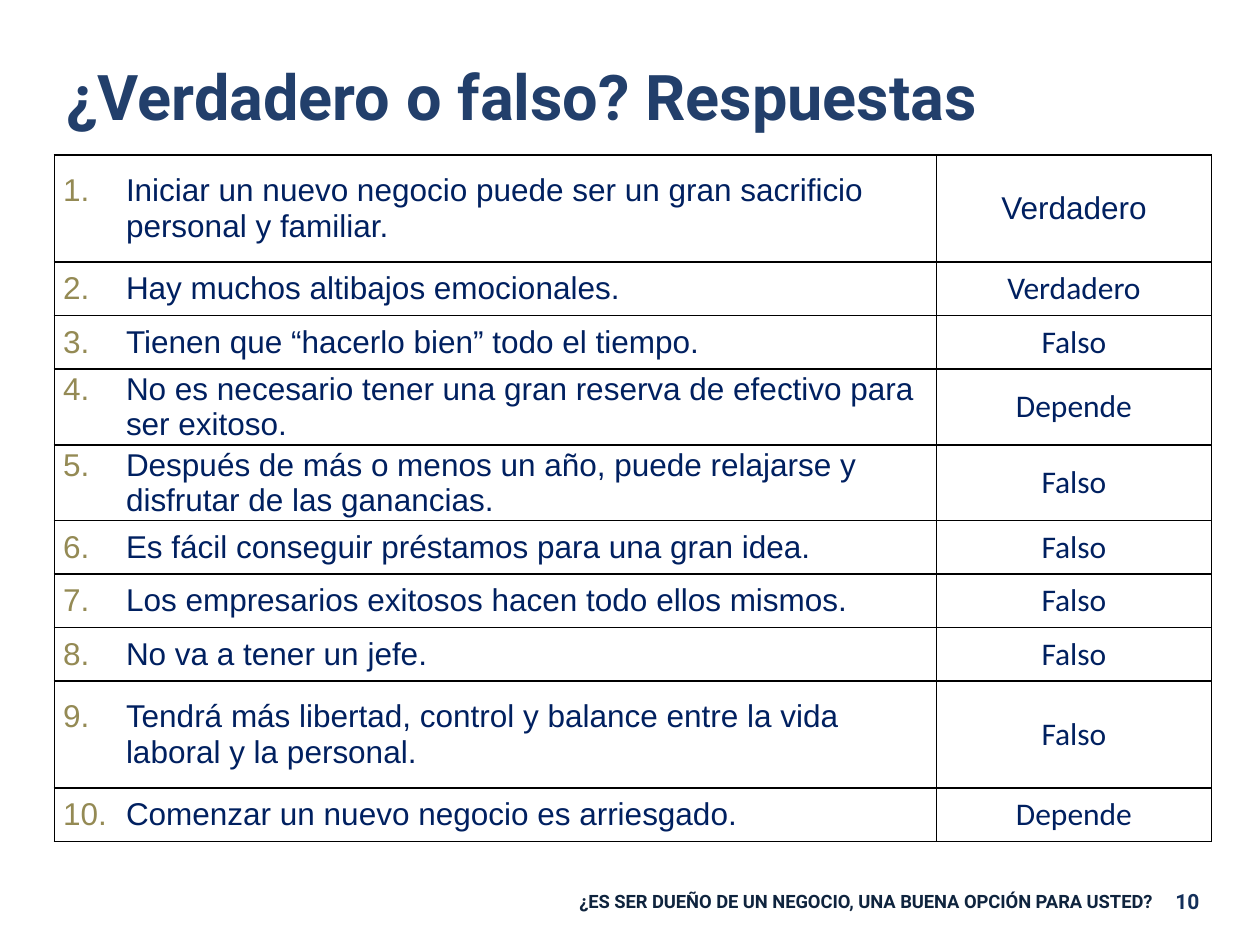
from lxml import etree
from pptx import Presentation
from pptx.dml.color import RGBColor
from pptx.enum.text import MSO_ANCHOR, PP_ALIGN
from pptx.oxml.ns import qn
from pptx.util import Pt

LEFT, CENTER, RIGHT = PP_ALIGN.LEFT, PP_ALIGN.CENTER, PP_ALIGN.RIGHT
MIDDLE, TOP = MSO_ANCHOR.MIDDLE, MSO_ANCHOR.TOP

BLACK = RGBColor(0x00, 0x00, 0x00)
NAVY = RGBColor(0x00, 0x20, 0x60)
TITLE_BLUE = RGBColor(0x22, 0x3F, 0x6B)
FOOTER_BLUE = RGBColor(0x0F, 0x24, 0x3E)
NUMBER_BLUE = RGBColor(0x13, 0x2F, 0x5A)
OLIVE = RGBColor(0x94, 0x8A, 0x54)

ROW_HEIGHT = 30.6
TALL_ROWS = (1, 9)
COLUMN_WIDTHS = (504, 157.4)
STATEMENTS = [
    ("Iniciar un nuevo negocio puede ser un gran sacrificio personal y familiar.", "Verdadero"),
    ("Hay muchos altibajos emocionales.", "Verdadero"),
    ("Tienen que “hacerlo bien” todo el tiempo.", "Falso"),
    ("No es necesario tener una gran reserva de efectivo para \vser exitoso.", "Depende"),
    ("Después de más o menos un año, puede relajarse y disfrutar de las ganancias.", "Falso"),
    ("Es fácil conseguir préstamos para una gran idea.", "Falso"),
    ("Los empresarios exitosos hacen todo ellos mismos.", "Falso"),
    ("No va a tener un jefe.", "Falso"),
    ("Tendrá más libertad, control y balance entre la vida laboral y la personal.", "Falso"),
    ("Comenzar un nuevo negocio es arriesgado.", "Depende"),
]


def write_text(tf, text, size=18, font="Arial", color=NAVY, bold=False, align=LEFT):
    """Write one formatted paragraph and return it."""
    p = tf.paragraphs[0]
    p.text = text
    p.alignment = align
    for r in p.runs:
        r.font.size = Pt(size)
        r.font.name = font
        r.font.bold = bold
        r.font.color.rgb = color
    return p


def add_text_box(s, left, top, width, height, text, wrap=True, anchor=TOP, **style):
    """Add a text box holding one paragraph."""
    tf = s.shapes.add_textbox(Pt(left), Pt(top), Pt(width), Pt(height)).text_frame
    tf.word_wrap = wrap
    tf.vertical_anchor = anchor
    write_text(tf, text, **style)


def number_paragraph(p, number):
    """Give a paragraph a hanging automatic number."""
    pPr = p._p.get_or_add_pPr()
    pPr.set("marL", str(Pt(36)))
    pPr.set("indent", str(-Pt(36)))
    color = etree.SubElement(pPr, qn("a:buClr"))
    etree.SubElement(color, qn("a:srgbClr"), val=str(OLIVE))
    etree.SubElement(pPr, qn("a:buFont"), typeface="+mj-lt")
    etree.SubElement(pPr, qn("a:buAutoNum"), type="arabicPeriod", startAt=str(number))


def format_cell(cell):
    """Set the margins, borders and empty fill of a cell."""
    cell.margin_left = cell.margin_right = Pt(5)
    cell.margin_top = cell.margin_bottom = 0
    cell.vertical_anchor = MIDDLE
    tcPr = cell._tc.get_or_add_tcPr()
    for side in "LRTB":
        line = etree.SubElement(tcPr, qn(f"a:ln{side}"), w=str(Pt(1)))
        fill = etree.SubElement(line, qn("a:solidFill"))
        etree.SubElement(fill, qn("a:srgbClr"), val=str(BLACK))
    cell.fill.background()


def add_answers_table(s, left, top):
    """Add the table of numbered statements and their answers."""
    heights = [ROW_HEIGHT * (2 if n in TALL_ROWS else 1)
               for n in range(1, len(STATEMENTS) + 1)]
    table = s.shapes.add_table(len(STATEMENTS), 2, Pt(left), Pt(top),
                               Pt(sum(COLUMN_WIDTHS)), Pt(sum(heights))).table
    table.first_row = table.horz_banding = False
    for column, width in zip(table.columns, COLUMN_WIDTHS):
        column.width = Pt(width)
    for i, (statement, answer) in enumerate(STATEMENTS):
        table.rows[i].height = Pt(heights[i])
        statement_cell, answer_cell = table.rows[i].cells
        format_cell(statement_cell)
        format_cell(answer_cell)
        number_paragraph(write_text(statement_cell.text_frame, statement), i + 1)
        write_text(answer_cell.text_frame, answer, align=CENTER,
                   font="Arial" if i == 0 else "Calibri")


def add_footer(s, left, top):
    """Add the course name and the page number."""
    add_text_box(s, left, top + 1.4, 409.7, 20,
                 "¿ES SER DUEÑO DE UN NEGOCIO, UNA BUENA OPCIÓN PARA USTED?",
                 size=10.5, font="Roboto", color=FOOTER_BLUE, bold=True, align=RIGHT)
    add_text_box(s, left + 408.2, top, 29.5, 21.6, "10", wrap=False,
                 size=12, font="Roboto", color=NUMBER_BLUE, bold=True)


def main():
    """Build and save the slide."""
    prs = Presentation()
    prs.slide_width, prs.slide_height = Pt(720), Pt(540)
    s = prs.slides.add_slide(prs.slide_layouts[6])
    add_text_box(s, 31, 30.2, 648, 48.2, "¿Verdadero o falso? Respuestas", anchor=MIDDLE,
                 size=36, font="Roboto", color=TITLE_BLUE, bold=True)
    add_answers_table(s, 31, 88.6)
    add_footer(s, 256.3, 504)
    prs.save("out.pptx")


if __name__ == "__main__":
    main()
